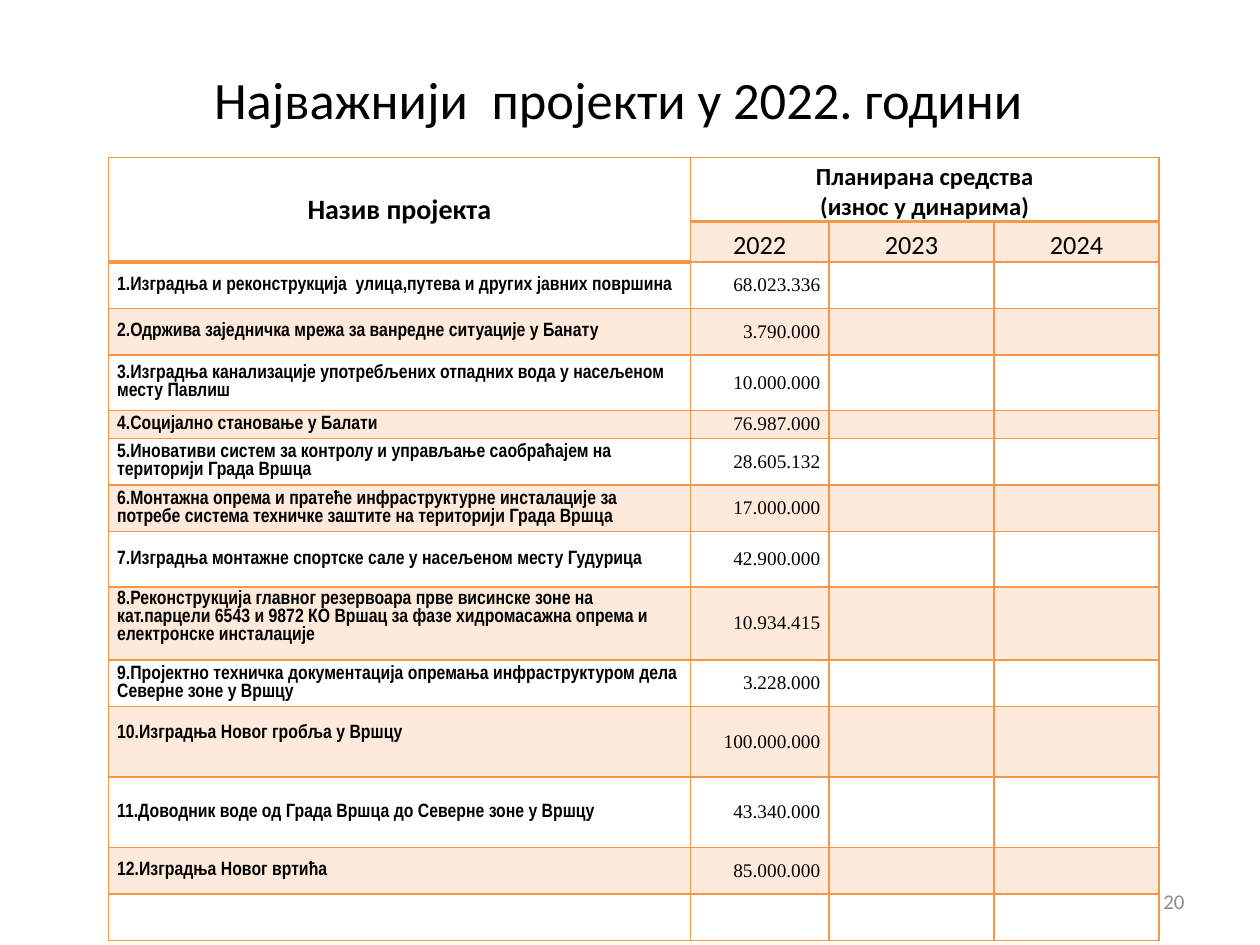
from lxml.etree import SubElement
from pptx import Presentation
from pptx.dml.color import RGBColor
from pptx.enum.text import MSO_ANCHOR, PP_ALIGN
from pptx.oxml.ns import qn
from pptx.util import Inches, Pt

TITLE = "Најважнији  пројекти у 2022. години"
PAGE = "20"
NAME_HEAD = "Назив пројекта"
FUNDS_HEAD = "Планирана средства\n(износ у динарима)"
YEARS = ["2022", "2023", "2024"]
# project, planned amount for 2022, row height, space below the text
PROJECTS = [
    ("1.Изградња и реконструкција  улица,путева и других јавних површина", "68.023.336", 0.37, 0),
    ("2.Одржива заједничка мрежа за ванредне ситуације у Банату", "3.790.000", 0.37, 0),
    ("3.Изградња канализације употребљених отпадних вода у насељеном месту Павлиш",
     "10.000.000", 0.44, 0),
    ("4.Социјално становање у Балати", "76.987.000", 0.22, 0),
    ("5.Иновативи систем за контролу и управљање саобраћајем на територији Града Вршца",
     "28.605.132", 0.37, 0),
    ("6.Монтажна опрема и пратеће инфраструктурне инсталације за потребе система "
     "техничке заштите на територији Града Вршца", "17.000.000", 0.37, 0),
    ("7.Изградња монтажне спортске сале у насељеном месту Гудурица", "42.900.000", 0.44, 0),
    ("8.Реконструкција главног резервоара прве висинске зоне на кат.парцели 6543 и 9872 "
     "КО Вршац за фазе хидромасажна опрема и електронске инсталације", "10.934.415", 0.58, 0.1),
    ("9.Пројектно техничка документација опремања инфраструктуром дела Северне зоне у Вршцу",
     "3.228.000", 0.37, 0),
    ("10.Изградња Новог гробља у Вршцу", "100.000.000", 0.56, 0.14),
    ("11.Доводник воде од Града Вршца до Северне зоне у Вршцу", "43.340.000", 0.56, 0),
    ("12.Изградња Новог вртића", "85.000.000", 0.37, 0),
    ("", "", 0.37, 0),
]
COLUMNS = [4.62, 1.1, 1.31, 1.31]
HEAD_ROWS = [0.51, 0.32]

THEME = {
    "text": "000000", "muted": "8C8C8C", "line": "F79646", "band": "FDEADA",
    "head_font": "Calibri", "name_font": "Arial Narrow", "amount_font": "Times New Roman",
    "title": 30, "name_head": 16, "funds_head": 14, "year": 15, "body": 11, "page": 12,
}


def write(tf, text, font, size, color="text", bold=False, align=PP_ALIGN.LEFT):
    tf.text = text
    for p in tf.paragraphs:
        p.alignment, p.line_spacing = align, 1.0
        f = p.font
        f.name, f.size, f.bold = THEME[font], Pt(THEME[size]), bold
        f.color.rgb = RGBColor.from_string(THEME[color])


def style_cell(cell, banded, bottom_width, space_below=0):
    cell.margin_left = cell.margin_right = Inches(0.07)
    cell.margin_top, cell.margin_bottom = 0, Inches(space_below)
    cell.vertical_anchor = MSO_ANCHOR.MIDDLE
    tcPr = cell._tc.get_or_add_tcPr()
    for side, width in (("L", 1), ("R", 1), ("T", 1), ("B", bottom_width)):
        ln = SubElement(tcPr, qn(f"a:ln{side}"), w=str(Pt(width)))
        SubElement(SubElement(ln, qn("a:solidFill")), qn("a:srgbClr"), val=THEME["line"])
    if banded:
        cell.fill.solid()
        cell.fill.fore_color.rgb = RGBColor.from_string(THEME["band"])
    else:
        cell.fill.background()


def add_projects(s):
    heights = HEAD_ROWS + [project[2] for project in PROJECTS]
    table = s.shapes.add_table(len(heights), len(COLUMNS), Inches(0.86), Inches(1.25),
                               Inches(sum(COLUMNS)), Inches(sum(heights))).table
    table.first_row = table.horz_banding = False
    for column, width in zip(table.columns, COLUMNS):
        column.width = Inches(width)
    for row, height in zip(table.rows, heights):
        row.height = Inches(height)

    for r in range(len(HEAD_ROWS)):
        for c in range(len(COLUMNS)):
            style_cell(table.cell(r, c), r == 1 and c > 0, 2 if r == 0 or c == 0 else 1)
    name_head, funds_head = table.cell(0, 0), table.cell(0, 1)
    name_head.merge(table.cell(1, 0))
    funds_head.merge(table.cell(0, 3))
    write(name_head.text_frame, NAME_HEAD, "head_font", "name_head",
          bold=True, align=PP_ALIGN.CENTER)
    write(funds_head.text_frame, FUNDS_HEAD, "head_font", "funds_head",
          bold=True, align=PP_ALIGN.CENTER)
    funds_head.vertical_anchor = MSO_ANCHOR.BOTTOM
    for c, year in enumerate(YEARS, 1):
        cell = table.cell(1, c)
        write(cell.text_frame, year, "head_font", "year", align=PP_ALIGN.CENTER)
        cell.vertical_anchor = MSO_ANCHOR.BOTTOM

    for i, (name, amount, _, space_below) in enumerate(PROJECTS):
        for c, text in enumerate((name, amount, "", "")):
            cell = table.cell(i + len(HEAD_ROWS), c)
            style_cell(cell, i % 2 == 1, 1, space_below if c == 0 else 0)
            if c == 0:
                write(cell.text_frame, text, "name_font", "body", bold=True)
            else:
                write(cell.text_frame, text, "amount_font", "body", align=PP_ALIGN.RIGHT)


def main():
    prs = Presentation()
    prs.slide_width, prs.slide_height = Inches(10), Inches(7.5)
    s = prs.slides.add_slide(prs.slide_layouts[5])

    title = s.shapes.title
    title.left, title.top, title.width, title.height = map(Inches, (0.41, 0.3, 9, 0.96))
    write(title.text_frame, TITLE, "head_font", "title", align=PP_ALIGN.CENTER)
    title.text_frame.vertical_anchor = MSO_ANCHOR.MIDDLE

    add_projects(s)

    page = s.shapes.add_textbox(*map(Inches, (7.17, 6.95, 2.33, 0.4))).text_frame
    page.word_wrap = True
    page.vertical_anchor = MSO_ANCHOR.MIDDLE
    write(page, PAGE, "head_font", "page", color="muted", align=PP_ALIGN.RIGHT)

    prs.save("out.pptx")


if __name__ == "__main__":
    main()
